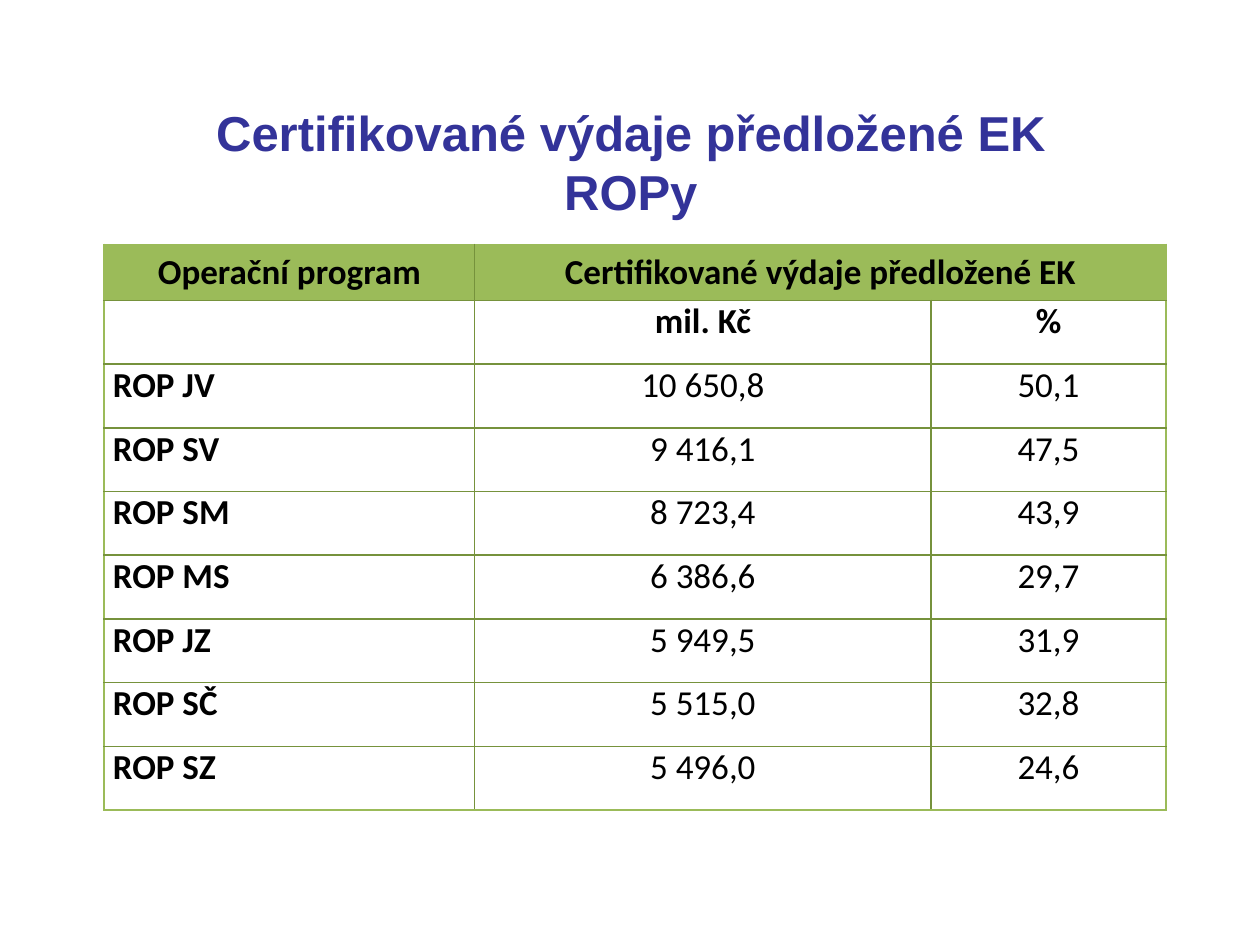
"""Build the slide with the table of certified expenditure by regional programme."""
from lxml import etree
from pptx import Presentation
from pptx.dml.color import RGBColor
from pptx.enum import text
from pptx.oxml import ns
from pptx.util import Pt

TITLE_BLUE = RGBColor(0x33, 0x33, 0x99)
LIGHT_GREEN = RGBColor(0x9B, 0xBB, 0x59)
DARK_GREEN = RGBColor(0x76, 0x92, 0x3C)
BLACK = RGBColor(0, 0, 0)

ROWS = [
    ("Operační program", "Certifikované výdaje předložené EK", ""),
    ("", "mil. Kč", "%"),
    ("ROP JV", "10 650,8", "50,1"),
    ("ROP SV", "9 416,1", "47,5"),
    ("ROP SM", "8 723,4", "43,9"),
    ("ROP MS", "6 386,6", "29,7"),
    ("ROP JZ", "5 949,5", "31,9"),
    ("ROP SČ", "5 515,0", "32,8"),
    ("ROP SZ", "5 496,0", "24,6"),
]
COLUMN_WIDTHS = [211.8, 260.8, 134.2]
HEADER_HEIGHT = 32
ROW_HEIGHT = 36.4


def format_paragraph(paragraph, font_name, size, color, bold, alignment):
    paragraph.alignment = alignment
    for run in paragraph.runs:
        run.font.name = font_name
        run.font.size = Pt(size)
        run.font.bold = bold
        run.font.color.rgb = color


def set_borders(cell, colors):
    properties = cell._tc.get_or_add_tcPr()
    for position, (side, color) in enumerate(colors.items()):
        line = etree.Element(ns.qn(f"a:ln{side}"), w=str(Pt(1)))
        fill = etree.SubElement(line, ns.qn("a:solidFill"))
        etree.SubElement(fill, ns.qn("a:srgbClr"), val=str(color))
        properties.insert(position, line)


presentation = Presentation()
presentation.slide_width = Pt(720)
presentation.slide_height = Pt(540)
slide = presentation.slides.add_slide(presentation.slide_layouts[6])

title = slide.shapes.add_textbox(Pt(36.5), Pt(66.5), Pt(648), Pt(51))
title_frame = title.text_frame
title_frame.word_wrap = True
title_frame.vertical_anchor = text.MSO_ANCHOR.MIDDLE
title_frame.text = "Certifikované výdaje předložené EK\vROPy"
format_paragraph(title_frame.paragraphs[0], "Arial", 28, TITLE_BLUE, True, text.PP_ALIGN.CENTER)

table_height = HEADER_HEIGHT + ROW_HEIGHT * (len(ROWS) - 1)
table = slide.shapes.add_table(
    len(ROWS), len(COLUMN_WIDTHS), Pt(59.5), Pt(139.7), Pt(sum(COLUMN_WIDTHS)), Pt(table_height)
).table
table.horz_banding = False
for column, width in zip(table.columns, COLUMN_WIDTHS):
    column.width = Pt(width)
for index, row in enumerate(table.rows):
    row.height = Pt(ROW_HEIGHT if index else HEADER_HEIGHT)
table.cell(0, 1).merge(table.cell(0, 2))

last_row, last_column = len(ROWS) - 1, len(COLUMN_WIDTHS) - 1
for row_index, values in enumerate(ROWS):
    for column_index, value in enumerate(values):
        cell = table.cell(row_index, column_index)
        is_header = row_index == 0
        right_edge = column_index == last_column or (is_header and column_index == 1)
        set_borders(cell, {
            "L": LIGHT_GREEN if column_index == 0 else DARK_GREEN,
            "R": LIGHT_GREEN if right_edge else DARK_GREEN,
            "T": LIGHT_GREEN if is_header else DARK_GREEN,
            "B": LIGHT_GREEN if row_index == last_row else DARK_GREEN,
        })
        if is_header:
            cell.fill.solid()
            cell.fill.fore_color.rgb = LIGHT_GREEN
        else:
            cell.fill.background()
        cell.margin_left = cell.margin_right = Pt(5)
        cell.margin_top = cell.margin_bottom = Pt(0)
        cell.vertical_anchor = text.MSO_ANCHOR.MIDDLE if is_header else text.MSO_ANCHOR.TOP
        if value:
            cell.text_frame.text = value
            bold = row_index < 2 or column_index == 0
            is_label = row_index > 1 and column_index == 0
            alignment = text.PP_ALIGN.LEFT if is_label else text.PP_ALIGN.CENTER
            format_paragraph(cell.text_frame.paragraphs[0], "Calibri", 20, BLACK, bold, alignment)

presentation.save("out.pptx")
